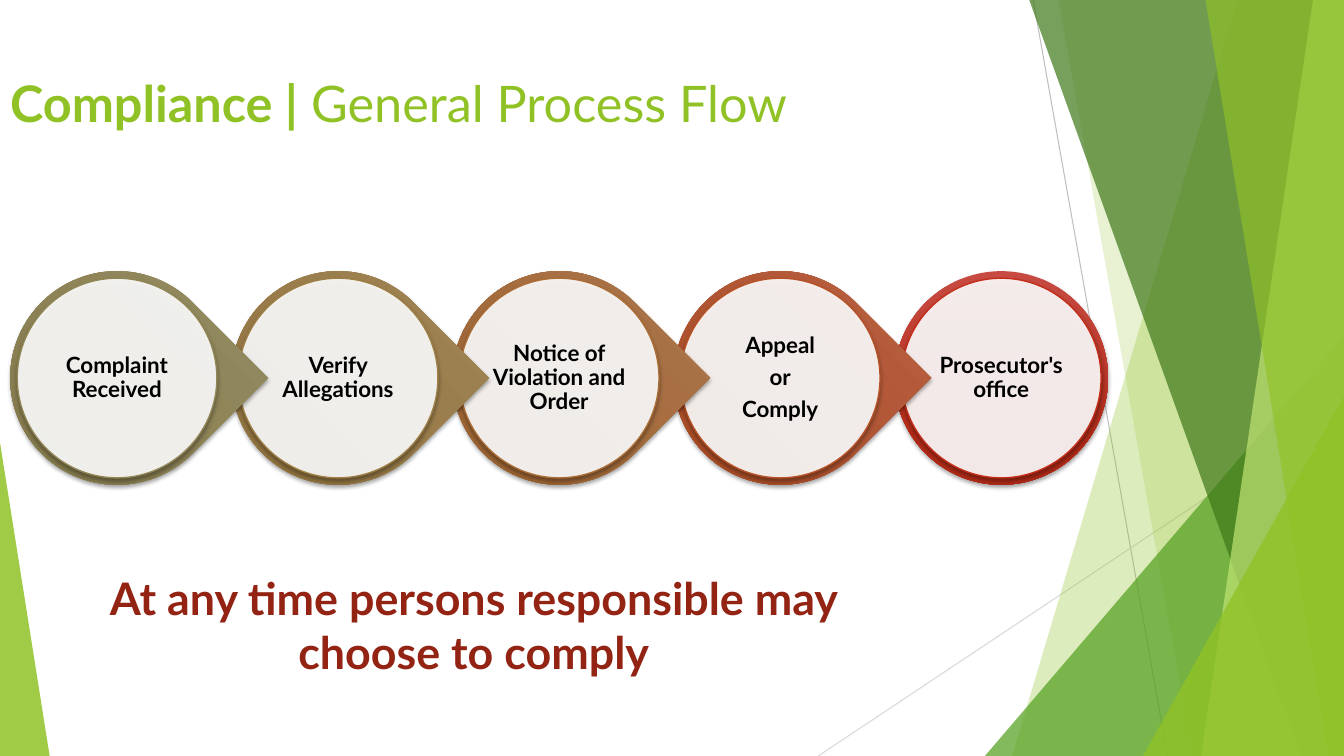
"""Build the compliance process flow slide."""
import pptx
import pptx.util
import pptx.dml.color
import pptx.enum.shapes
import pptx.enum.text
import pptx.oxml
import pptx.oxml.ns

Pt = pptx.util.Pt
RGB = pptx.dml.color.RGBColor.from_string
SHAPE = pptx.enum.shapes.MSO_SHAPE
ALIGN = pptx.enum.text.PP_ALIGN
ANCHOR = pptx.enum.text.MSO_ANCHOR
qn = pptx.oxml.ns.qn
NS = pptx.oxml.ns.nsdecls("a")
COLORS = {
    "lime": "90C226", "green": "54A021", "forest": "3F7819", "pale": "C0E474",
    "grey": "BFBFBF", "silver": "D9D9D9", "white": "FFFFFF",
    "black": "000000", "red": "932313",
}
WIDTH, HEIGHT, TOP = 960, 540, -0.6


def paint(sp, color, opacity):
    """Give a shape a flat translucent fill, without line or shadow."""
    sp.shadow.inherit = False
    sp.line.fill.background()
    sp.fill.solid()
    sp.fill.fore_color.rgb = RGB(COLORS[color])
    clr = sp._element.spPr.find(qn("a:solidFill"))[0]
    clr.append(pptx.oxml.parse_xml(f'<a:alpha {NS} val="{opacity * 1000}"/>'))


def cast_shadow(sp):
    """Add a soft shadow below a shape."""
    sp.shadow.inherit = False
    sp._element.spPr.find(qn("a:effectLst")).append(pptx.oxml.parse_xml(
        f'<a:outerShdw {NS} blurRad="38100" dist="25400" dir="5400000" rotWithShape="0">'
        f'<a:srgbClr val="{COLORS["black"]}"><a:alpha val="35000"/></a:srgbClr></a:outerShdw>'))


prs = pptx.Presentation()
prs.slide_width, prs.slide_height = Pt(WIDTH), Pt(HEIGHT)
s = prs.slides.add_slide(prs.slide_layouts[5])

for x1, y1, x2, y2, color in [(738, 0, 834, HEIGHT, "grey"),
                              (WIDTH, 290, 584.5, HEIGHT, "silver")]:
    line = s.shapes.add_connector(pptx.enum.shapes.MSO_CONNECTOR.STRAIGHT,
                                  Pt(x1), Pt(y1), Pt(x2), Pt(y2))
    line.line.color.rgb = RGB(COLORS[color])
    line.line.width = Pt(0.75)
    line._element.spPr.append(pptx.oxml.parse_xml(f"<a:effectLst {NS}/>"))

facets = [
    ("band", 884, 723, "lime", 30),
    ("band", 756, 852, "lime", 20),
    ("triangle", 703.5, 240, 256.5, 1, "green", 72),
    ("band", 735, 929.5, "forest", 70),
    ("band", 938, 858, "pale", 70),
    ("band", 861, 949, "lime", 65),
    ("triangle", 816.5, 283, 143.5, 1, "lime", 80),
    ("triangle", 0, 316, 35.5, 0, "lime", 85),
]
for kind, *geometry, color, opacity in facets:
    if kind == "band":
        top_x, bottom_x = geometry
        outline = s.shapes.build_freeform(Pt(top_x), Pt(TOP))
        outline.add_line_segments([(Pt(WIDTH), Pt(TOP)), (Pt(WIDTH), Pt(HEIGHT)),
                                   (Pt(bottom_x), Pt(HEIGHT))])
        sp = outline.convert_to_shape()
    else:
        left, top, width, apex = geometry
        sp = s.shapes.add_shape(SHAPE.ISOSCELES_TRIANGLE, Pt(left), Pt(top),
                                Pt(width), Pt(HEIGHT - top))
        sp.adjustments[0] = apex
    paint(sp, color, opacity)

title = s.shapes.title
title.left, title.top, title.width, title.height = Pt(0), Pt(48), Pt(677), Pt(104)
tf = title.text_frame
tf.auto_size = pptx.enum.text.MSO_AUTO_SIZE.NONE
tf.vertical_anchor = ANCHOR.TOP
p = tf.paragraphs[0]
p.alignment = ALIGN.LEFT
p.font.name, p.font.size = "Lato", Pt(36)
p.font.color.rgb = RGB(COLORS["lime"])
for text, bold in [("Compliance |", True), (" General Process Flow", False)]:
    r = p.add_run()
    r.text, r.font.bold = text, bold

steps = [
    ("Complaint Received", "988E64", "857B4E", "918655"),
    ("Verify Allegations", "A48759", "917440", "9E7F46"),
    ("Notice of Violation and Order", "AF784F", "9C6432", "AB6E37"),
    ("Appeal\nor\nComply", "BB6348", "A84C25", "B85328"),
    ("Prosecutor's office", "C74B42", "B32B18", "C42F1A"),
]
RING, DISC, LABEL, CENTER_Y = 152.6, 142.6, 101.6, 270
for i, (text, light, dark, edge) in reversed(list(enumerate(steps))):
    center_x = 83.6 + 157.9 * i
    last = i == len(steps) - 1
    ring, disc = [
        s.shapes.add_shape(preset, Pt(center_x - size / 2), Pt(CENTER_Y - size / 2),
                           Pt(size), Pt(size))
        for preset, size in [(SHAPE.OVAL if last else SHAPE.TEAR, RING), (SHAPE.OVAL, DISC)]]
    if not last:
        ring.rotation = 45
    ring.line.fill.background()
    ring.fill.gradient()
    ring.fill.gradient_angle = 270
    for stop, color, position in zip(ring.fill.gradient_stops, (light, dark), (0, 0.78)):
        stop.color.rgb = RGB(color)
        stop.position = position
    cast_shadow(ring)
    paint(disc, "white", 90)
    disc.line.color.rgb = RGB(edge)
    disc.line.width = Pt(1)
    cast_shadow(disc)

    label = s.shapes.add_textbox(Pt(center_x - LABEL / 2), Pt(CENTER_Y - LABEL / 2),
                                 Pt(LABEL), Pt(LABEL))
    tf = label.text_frame
    tf.word_wrap = True
    tf.vertical_anchor = ANCHOR.MIDDLE
    tf.margin_left = tf.margin_right = tf.margin_top = tf.margin_bottom = Pt(1.5)
    tf.text = text
    for p in tf.paragraphs:
        p.alignment = ALIGN.CENTER
        p.line_spacing, p.space_after = 0.9, Pt(5.6)
        p.font.name, p.font.size, p.font.bold = "Lato", Pt(16), True
        p.font.color.rgb = RGB(COLORS["black"])

note = s.shapes.add_textbox(Pt(65.5), Pt(404), Pt(546), Pt(83))
tf = note.text_frame
tf.word_wrap = True
tf.text = "At any time persons responsible may choose to comply"
p = tf.paragraphs[0]
p.alignment = ALIGN.CENTER
p.space_before = Pt(10)
p.font.name, p.font.size, p.font.bold = "Lato", Pt(32), True
p.font.color.rgb = RGB(COLORS["red"])

prs.save("out.pptx")
